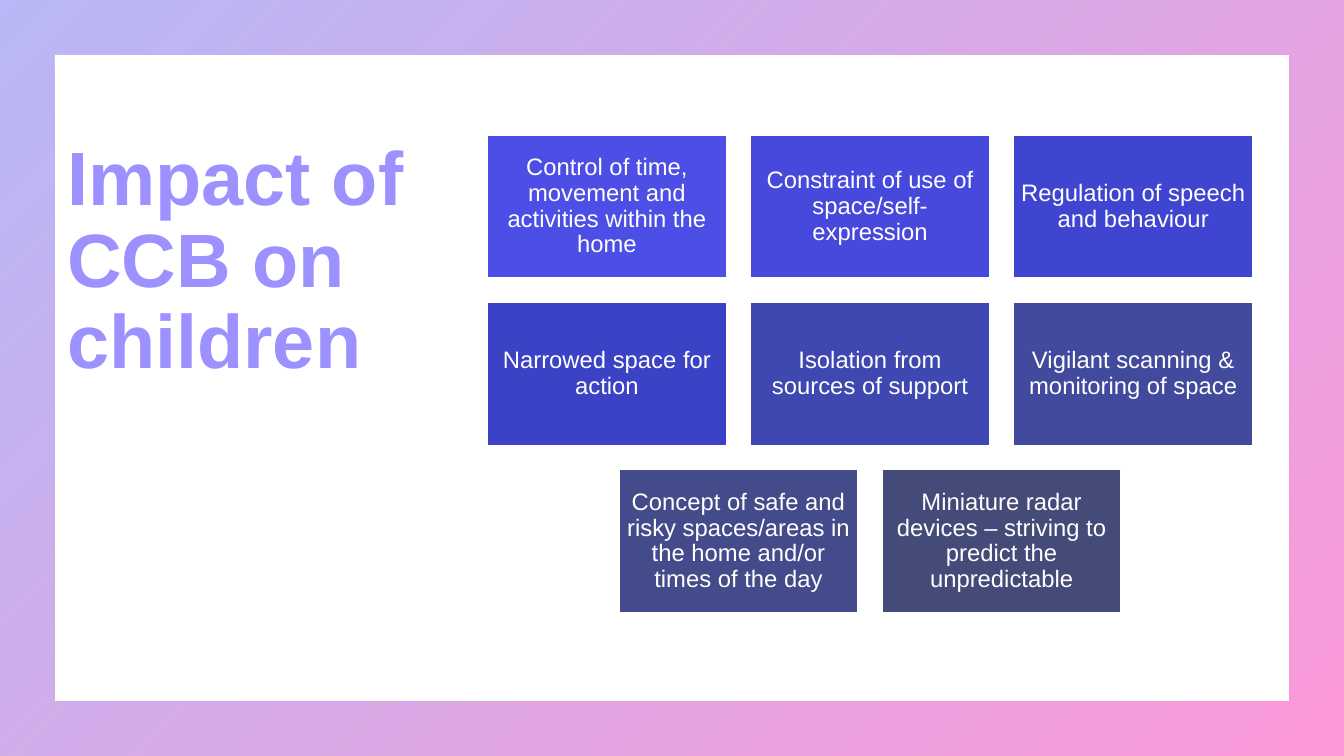
"""Build the slide on the impact of CCB on children."""
from dataclasses import dataclass

from lxml import etree
from pptx import Presentation
from pptx import util as u
from pptx.dml.color import RGBColor
from pptx.enum import shapes, text
from pptx.oxml.ns import qn


@dataclass(frozen=True)
class Theme:
    """Colours, font and type sizes of the slide."""
    font: str = "Arial"
    white: str = "FFFFFF"
    heading: str = "9C91FE"
    frame_start: str = "4D4EE6"
    frame_end: str = "F900A0"
    frame_opacity: int = 40
    heading_size: int = 54
    impact_size: int = 17


@dataclass(frozen=True)
class Impact:
    """One effect on children and the colour of its tile."""
    wording: str
    colour: str


THEME = Theme()
WIDTH, HEIGHT = 13.33, 7.5
TILE_WIDTH, TILE_HEIGHT, GAP = 2.37, 1.42, 0.24
GRID_CENTRE, GRID_TOP = 8.63, 1.34
IMPACT_ROWS = [
    [
        Impact("Control of time, movement and activities within the home", "4D4EE6"),
        Impact("Constraint of use of space/self-expression", "4649DC"),
        Impact("Regulation of speech and behaviour", "4045D1"),
    ],
    [
        Impact("Narrowed space for action", "3B42C5"),
        Impact("Isolation from sources of support", "3F47B1"),
        Impact("Vigilant scanning & monitoring of space", "424A9D"),
    ],
    [
        Impact("Concept of safe and risky spaces/areas in the home and/or times of the day", "444B8A"),
        Impact("Miniature radar devices – striving to predict the unpredictable", "454B78"),
    ],
]


def write_text(holder, wording: str, *, size: int, colour: str, bold: bool = False,
               align=text.PP_ALIGN.LEFT, margin: float = 0.1) -> None:
    """Write one vertically centred, wrapped paragraph into a shape."""
    frame = holder.text_frame
    frame.word_wrap = True
    frame.vertical_anchor = text.MSO_ANCHOR.MIDDLE
    frame.margin_left = frame.margin_right = u.Inches(margin)
    frame.margin_top = frame.margin_bottom = u.Inches(0.05)
    paragraph = frame.paragraphs[0]
    paragraph.alignment = align
    paragraph.line_spacing = 0.9
    run = paragraph.add_run()
    run.text = wording
    run.font.name = THEME.font
    run.font.size = u.Pt(size)
    run.font.bold = bold
    run.font.color.rgb = RGBColor.from_string(colour)


def add_block(slide, kind, left: float, top: float, width: float, height: float):
    """Add a preset shape without shadow or line."""
    block = slide.shapes.add_shape(
        kind, u.Inches(left), u.Inches(top), u.Inches(width), u.Inches(height))
    block.shadow.inherit = False
    block.line.fill.background()
    return block


def fill_solid(block, colour: str) -> None:
    """Fill a shape with one colour."""
    block.fill.solid()
    block.fill.fore_color.rgb = RGBColor.from_string(colour)


def add_border(slide) -> None:
    """Draw the translucent diagonal gradient frame around the slide."""
    border = add_block(slide, shapes.MSO_SHAPE.FRAME, 0, 0, WIDTH, HEIGHT)
    border.adjustments[0] = 0.072
    border.fill.gradient()
    border.fill.gradient_angle = 315
    for stop, colour in zip(border.fill.gradient_stops, (THEME.frame_start, THEME.frame_end)):
        stop.color.rgb = RGBColor.from_string(colour)
    for shade in border.fill._xPr.iter(qn("a:srgbClr")):
        etree.SubElement(shade, qn("a:alpha"), val=str(THEME.frame_opacity * 1000))


def add_impact(slide, impact: Impact, left: float, top: float) -> None:
    """Draw one coloured tile with its wording."""
    tile = add_block(slide, shapes.MSO_SHAPE.RECTANGLE, left, top, TILE_WIDTH, TILE_HEIGHT)
    fill_solid(tile, impact.colour)
    tile.line.color.rgb = RGBColor.from_string(THEME.white)
    tile.line.width = u.Pt(1)
    write_text(tile, impact.wording, size=THEME.impact_size, colour=THEME.white,
               align=text.PP_ALIGN.CENTER, margin=0.06)


def main() -> None:
    """Build and save the slide."""
    deck = Presentation()
    deck.slide_width, deck.slide_height = u.Inches(WIDTH), u.Inches(HEIGHT)
    slide = deck.slides.add_slide(deck.slide_layouts[6])

    backdrop = add_block(slide, shapes.MSO_SHAPE.RECTANGLE, 0, 0, WIDTH, HEIGHT)
    fill_solid(backdrop, THEME.white)
    add_border(slide)

    heading = slide.shapes.add_textbox(
        u.Inches(0.57), u.Inches(-0.44), u.Inches(4.86), u.Inches(6.09))
    write_text(heading, "Impact of CCB on children", size=THEME.heading_size,
               colour=THEME.heading, bold=True)

    for row, impacts in enumerate(IMPACT_ROWS):
        row_width = len(impacts) * (TILE_WIDTH + GAP) - GAP
        for column, impact in enumerate(impacts):
            add_impact(slide, impact,
                       GRID_CENTRE - row_width / 2 + column * (TILE_WIDTH + GAP),
                       GRID_TOP + row * (TILE_HEIGHT + GAP))

    deck.save("out.pptx")


if __name__ == "__main__":
    main()
